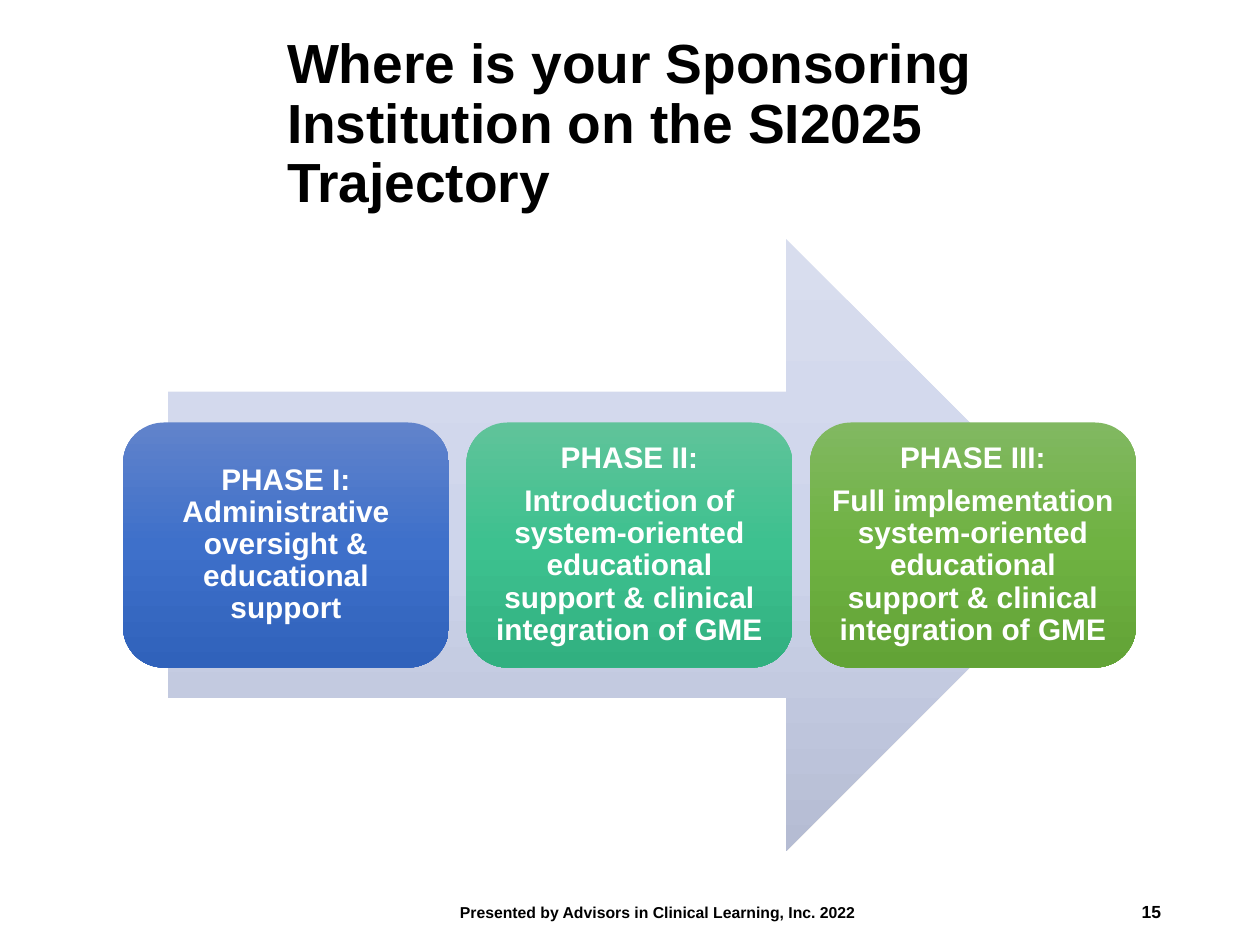
from copy import deepcopy
from pptx import Presentation
from pptx.dml.color import RGBColor
from pptx.enum.shapes import MSO_SHAPE
from pptx.enum.text import MSO_ANCHOR, PP_ALIGN
from pptx.oxml.ns import qn
from pptx.util import Emu, Pt

HEX = {
    "ink": "000000",
    "paper": "FFFFFF",
    "arrow": ["D8DDEE", "CED5EB", "B5BCD3"],
    "blue": ["6183CB", "3E70CA", "3062BB"],
    "teal": ["60C39A", "3DC18F", "31B080"],
    "green": ["81B861", "6FB242", "62A336"],
}
GOAL = "system-oriented educational support & clinical integration of GME"
PHASES = [
    ("blue", ["PHASE I: Administrative oversight & educational support"]),
    ("teal", ["PHASE II:", f"Introduction of {GOAL}"]),
    ("green", ["PHASE III:", f"Full implementation {GOAL}"]),
]


def px(count):
    """Turn px into EMU."""
    return Emu(round(count * 914400 / 126))


def shade(shape, tones):
    """Fill a shape from top to bottom with evenly spaced tones."""
    shape.shadow.inherit = False
    shape.line.fill.background()
    fill = shape.fill
    fill.gradient()
    fill.gradient_angle = 270
    stops = shape.element.spPr.find(qn("a:gradFill")).find(qn("a:gsLst"))
    stops.append(deepcopy(stops[-1]))
    for step, (stop, tone) in enumerate(zip(fill.gradient_stops, tones)):
        stop.position = step / (len(tones) - 1)
        stop.color.rgb = RGBColor.from_string(tone)


def write(shape, lines, size, color, align, inset, lead=1.0):
    """Write bold lines into a shape, one paragraph each."""
    frame = shape.text_frame
    frame.word_wrap = True
    frame.vertical_anchor = MSO_ANCHOR.MIDDLE
    frame.margin_left = frame.margin_right = px(inset[0])
    frame.margin_top = frame.margin_bottom = px(inset[1])
    for spot, line in enumerate(lines):
        para = frame.add_paragraph() if spot else frame.paragraphs[0]
        para.alignment = align
        para.line_spacing = lead
        para.space_before = Pt(6 if spot else 0)
        run = para.add_run()
        run.text = line
        font = run.font
        font.name, font.size, font.bold = "Arial", Pt(size), True
        font.color.rgb = RGBColor.from_string(HEX[color])


def label(slide, box, text, size, align, lead=1.0):
    """Place one line of dark text in a box."""
    shape = slide.shapes.add_textbox(*map(px, box))
    write(shape, [text], size, "ink", align, (12, 6), lead)


def draw_flow(slide, box):
    """Draw the arrow and the row of phases across a box."""
    left, top, width, height = box
    arrow = slide.shapes.add_shape(
        MSO_SHAPE.RIGHT_ARROW, px(left + 45), px(top), px(width - 89), px(height))
    shade(arrow, HEX["arrow"])
    wide, tall = 326, 245
    pitch = (width - wide) / (len(PHASES) - 1)
    for spot, (tone, lines) in enumerate(PHASES):
        card = slide.shapes.add_shape(
            MSO_SHAPE.ROUNDED_RECTANGLE, px(left + spot * pitch),
            px(top + (height - tall) / 2), px(wide), px(tall))
        shade(card, HEX[tone])
        write(card, lines, 17, "paper", PP_ALIGN.CENTER, (9, 9), 0.9)


def draw_foot(slide, box):
    """Place the presenter line and the page number in a strip."""
    left, top, width, height = box
    label(slide, (left + width - 284, top, 284, height), "15", 10, PP_ALIGN.RIGHT)
    label(slide, (left, top, 481, height),
          "Presented by Advisors in Clinical Learning, Inc. 2022", 9, PP_ALIGN.CENTER)


def main():
    """Build and save the slide."""
    deck = Presentation()
    deck.slide_width, deck.slide_height = px(1260), px(945)
    slide = deck.slides.add_slide(deck.slide_layouts[6])
    draw_flow(slide, (123, 239, 1013, 612))
    label(slide, (275, 34, 900, 183),
          "Where is your Sponsoring Institution on the SI2025 Trajectory",
          31.5, PP_ALIGN.LEFT, 0.9)
    draw_foot(slide, (417, 887, 756, 50))
    deck.save("out.pptx")


if __name__ == "__main__":
    main()
